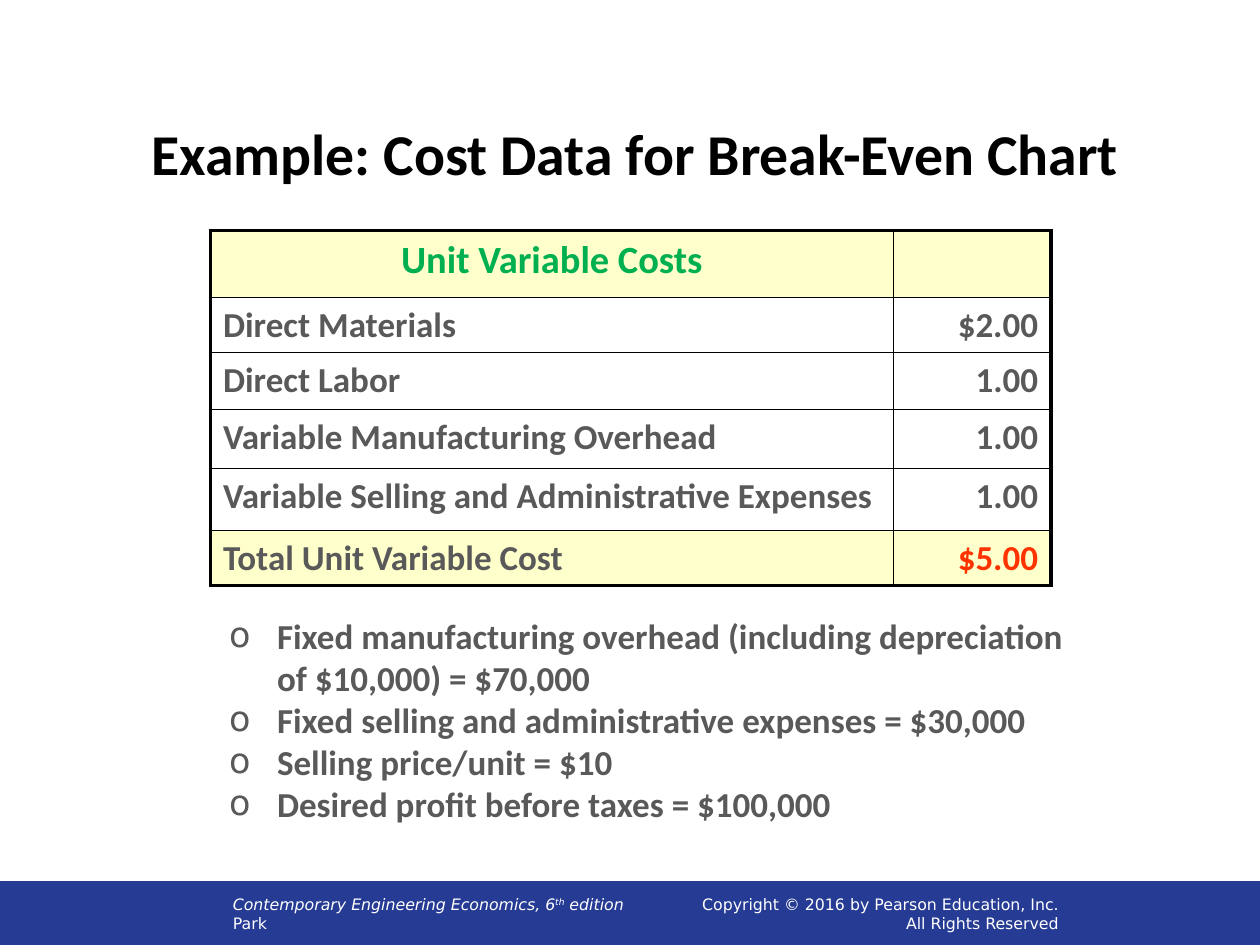
from dataclasses import dataclass

from lxml import etree
from pptx import Presentation
from pptx.dml.color import RGBColor
from pptx.enum.shapes import MSO_SHAPE
from pptx.enum.text import MSO_ANCHOR, PP_ALIGN
from pptx.oxml.ns import qn
from pptx.util import Inches, Pt

LEFT, CENTER, RIGHT = PP_ALIGN.LEFT, PP_ALIGN.CENTER, PP_ALIGN.RIGHT
TOP, MIDDLE = MSO_ANCHOR.TOP, MSO_ANCHOR.MIDDLE
RECTANGLE = MSO_SHAPE.RECTANGLE


@dataclass(frozen=True)
class Theme:
    body_font: str = "Calibri"
    footer_font: str = "DejaVu Sans"
    black: str = "000000"
    white: str = "FFFFFF"
    gray: str = "595959"
    green: str = "00B050"
    red: str = "FF3300"
    cream: str = "FFFFCC"
    navy: str = "263B94"
    title_size: int = 33
    header_size: int = 22
    body_size: int = 20
    footer_size: int = 9
    thin: float = 1
    thick: float = 2.25


THEME = Theme()

COSTS = [
    ("Unit Variable Costs", ""),
    ("Direct Materials", "$2.00"),
    ("Direct Labor", "1.00"),
    ("Variable Manufacturing Overhead", "1.00"),
    ("Variable Selling and Administrative Expenses", "1.00"),
    ("Total Unit Variable Cost", "$5.00"),
]
COLUMN_WIDTHS = [5.42, 1.25]
ROW_HEIGHTS = [0.53, 0.44, 0.45, 0.47, 0.49, 0.44]
FACTS = [
    "Fixed manufacturing overhead (including depreciation of $10,000) = $70,000",
    "Fixed selling and administrative expenses = $30,000",
    "Selling price/unit = $10",
    "Desired profit before taxes = $100,000",
]
SOURCE = [[("Contemporary Engineering Economics, 6", {"italic": True}),
           ("th", {"italic": True, "raised": True}),
           (" edition", {"italic": True})],
          [("Park", {})]]
COPYRIGHT = [[("Copyright © 2016 by Pearson Education, Inc.", {})],
             [("All Rights Reserved", {})]]


def style(size, color, name=THEME.body_font, bold=True):
    return {"size": Pt(size), "color": color, "name": name, "bold": bold}


def add_span(para, text, look):
    span = para.add_run()
    span.text = text
    for key, value in look.items():
        if key == "color":
            span.font.color.rgb = RGBColor.from_string(value)
        elif key == "raised":
            span.font._element.set("baseline", "30000")
        else:
            setattr(span.font, key, value)


def add_text(page, box, paragraphs, look, align=LEFT, anchor=TOP):
    """Each paragraph is a list of (text, extra format) spans."""
    frame = page.shapes.add_textbox(*map(Inches, box)).text_frame
    frame.word_wrap = True
    frame.vertical_anchor = anchor
    for index, spans in enumerate(paragraphs):
        para = frame.add_paragraph() if index else frame.paragraphs[0]
        para.alignment = align
        for text, extra in spans:
            add_span(para, text, look | extra)
    return frame


def add_bullet(para, indent, hanging):
    settings = para._p.get_or_add_pPr()
    settings.set("marL", str(Inches(indent)))
    settings.set("indent", str(-Inches(hanging)))
    etree.SubElement(settings, qn("a:buFont")).set("typeface", THEME.footer_font)
    etree.SubElement(settings, qn("a:buChar")).set("char", "o")


def set_borders(cell, widths):
    settings = cell._tc.get_or_add_tcPr()
    for index, (side, width) in enumerate(widths.items()):
        line = etree.Element(qn(f"a:ln{side}"), w=str(Pt(width)))
        fill = etree.SubElement(line, qn("a:solidFill"))
        etree.SubElement(fill, qn("a:srgbClr")).set("val", THEME.black)
        settings.insert(index, line)


def add_footer(page, box):
    left, top, width, height = box
    band = page.shapes.add_shape(RECTANGLE, *map(Inches, box))
    band.shadow.inherit = False
    band.fill.solid()
    band.fill.fore_color.rgb = RGBColor.from_string(THEME.navy)
    band.line.color.rgb = RGBColor.from_string(THEME.navy)
    band.line.width = Pt(0.75)
    look = style(THEME.footer_size, THEME.white, THEME.footer_font, False)
    # Source on the left, copyright on the right
    add_text(page, (left + 0.175 * width, top, 0.33 * width, height),
             SOURCE, look, anchor=MIDDLE)
    add_text(page, (left + 0.49 * width, top, 0.36 * width, height),
             COPYRIGHT, look, RIGHT, MIDDLE)


def add_title(page, box):
    frame = add_text(page, box, [[("Example: Cost Data for Break-Even Chart", {})]],
                     style(THEME.title_size, THEME.black), CENTER, MIDDLE)
    frame.paragraphs[0].line_spacing = 0.9


def add_cost_table(page, box):
    last_row, last_column = len(COSTS) - 1, len(COLUMN_WIDTHS) - 1
    frame = page.shapes.add_table(len(COSTS), len(COLUMN_WIDTHS), *map(Inches, box))
    table = frame.table
    for column, width in zip(table.columns, COLUMN_WIDTHS):
        column.width = Inches(width)
    for row, height in zip(table.rows, ROW_HEIGHTS):
        row.height = Inches(height)

    for r, values in enumerate(COSTS):
        for c, value in enumerate(values):
            cell = table.cell(r, c)
            shade = THEME.cream if r in (0, last_row) else THEME.white
            cell.fill.solid()
            cell.fill.fore_color.rgb = RGBColor.from_string(shade)
            # Thick frame around the table, thin lines inside
            outer = {"L": c == 0, "R": c == last_column,
                     "T": r == 0, "B": r == last_row}
            set_borders(cell, {side: THEME.thick if edge else THEME.thin
                               for side, edge in outer.items()})
            if not value:
                continue
            look = style(THEME.body_size, THEME.gray)
            if r == 0:
                look = style(THEME.header_size, THEME.green)
            elif (r, c) == (last_row, last_column):
                look["color"] = THEME.red
            para = cell.text_frame.paragraphs[0]
            para.alignment = CENTER if r == 0 else (LEFT, RIGHT)[c]
            add_span(para, value, look)


def add_facts(page, box):
    frame = add_text(page, box, [[(fact, {})] for fact in FACTS],
                     style(THEME.body_size, THEME.gray))
    for para in frame.paragraphs:
        add_bullet(para, 0.88, 0.38)


def main():
    deck = Presentation()
    deck.slide_width, deck.slide_height = Inches(10), Inches(7.5)
    page = deck.slides.add_slide(deck.slide_layouts[6])
    add_footer(page, (0, 7, 10, 0.5))
    add_title(page, (0.5, 0.77, 9.08, 0.95))
    add_cost_table(page, (1.67, 1.83, sum(COLUMN_WIDTHS), sum(ROW_HEIGHTS)))
    add_facts(page, (1.22, 4.83, 7.55, 1.78))
    deck.save("out.pptx")


if __name__ == "__main__":
    main()
